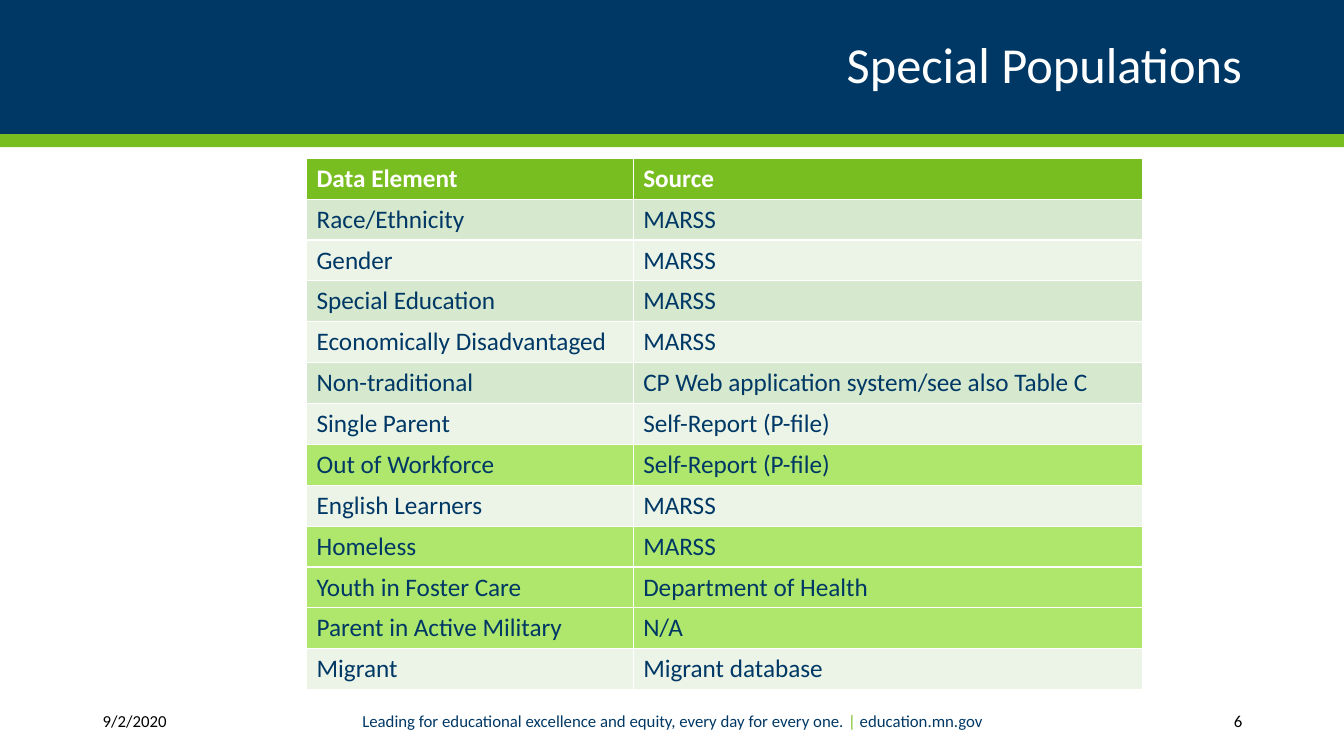
import pptx
import pptx.util
import pptx.dml.color
import pptx.enum.shapes
import pptx.enum.text

Inches = pptx.util.Inches
RGBColor = pptx.dml.color.RGBColor
MSO_SHAPE = pptx.enum.shapes.MSO_SHAPE
MSO_ANCHOR = pptx.enum.text.MSO_ANCHOR
PP_ALIGN = pptx.enum.text.PP_ALIGN

NAVY = RGBColor(0x00, 0x38, 0x65)
GREEN = RGBColor(0x78, 0xBE, 0x21)
HIGHLIGHT = RGBColor(0xAF, 0xE6, 0x6C)
BAND_DARK = RGBColor(0xD6, 0xE8, 0xCD)
BAND_LIGHT = RGBColor(0xEC, 0xF4, 0xE8)
WHITE = RGBColor(0xFF, 0xFF, 0xFF)
BLACK = RGBColor(0x00, 0x00, 0x00)


def format_run(r, size, color, bold=False):
    r.font.name = "Calibri"
    r.font.size = pptx.util.Pt(size)
    r.font.color.rgb = color
    r.font.bold = bold


prs = pptx.Presentation()
prs.slide_width = Inches(13.33)
prs.slide_height = Inches(7.5)
s = prs.slides.add_slide(prs.slide_layouts[5])

# Header bands, placed behind the title
title = s.shapes.title
for top, height, color in [(0, 1.33, NAVY), (1.33, 0.13, GREEN)]:
    sp = s.shapes.add_shape(MSO_SHAPE.RECTANGLE, 0, Inches(top),
                            prs.slide_width, Inches(height))
    sp.shadow.inherit = False
    sp.fill.solid()
    sp.fill.fore_color.rgb = color
    sp.line.fill.background()
    title.element.addprevious(sp.element)

# Title
title.left, title.top = Inches(0.92), Inches(0.17)
title.width, title.height = Inches(11.5), Inches(1)
tf = title.text_frame
tf.text = "Special Populations"
tf.vertical_anchor = MSO_ANCHOR.MIDDLE
p = tf.paragraphs[0]
p.alignment = PP_ALIGN.RIGHT
p.line_spacing = 0.9
format_run(p.runs[0], 36, WHITE)

# Table of data elements and their sources
rows = [
    ("Data Element", "Source"),
    ("Race/Ethnicity", "MARSS"),
    ("Gender", "MARSS"),
    ("Special Education", "MARSS"),
    ("Economically Disadvantaged", "MARSS"),
    ("Non-traditional", "CP Web application system/see also Table C"),
    ("Single Parent", "Self-Report (P-file)"),
    ("Out of Workforce", "Self-Report (P-file)"),
    ("English Learners", "MARSS"),
    ("Homeless", "MARSS"),
    ("Youth in Foster Care", "Department of Health"),
    ("Parent in Active Military", "N/A"),
    ("Migrant", "Migrant database"),
]
highlighted = {"Out of Workforce", "Homeless", "Youth in Foster Care",
               "Parent in Active Military"}
table = s.shapes.add_table(len(rows), 2, Inches(3.04), Inches(1.57),
                           Inches(8.29), Inches(5.27)).table
table.columns[0].width = Inches(3.24)
table.columns[1].width = Inches(5.05)
for i, row in enumerate(rows):
    if i == 0:
        fill = GREEN
    elif row[0] in highlighted:
        fill = HIGHLIGHT
    else:
        fill = BAND_DARK if i % 2 else BAND_LIGHT
    for j, text in enumerate(row):
        cell = table.cell(i, j)
        cell.text = text
        cell.fill.solid()
        cell.fill.fore_color.rgb = fill
        format_run(cell.text_frame.paragraphs[0].runs[0], 18,
                   NAVY if i else WHITE, bold=i == 0)

# Footer: date, slide number, tagline
footers = [
    (0.92, 1.49, PP_ALIGN.LEFT, [("9/2/2020", BLACK)]),
    (10.82, 1.6, PP_ALIGN.RIGHT, [("6", BLACK)]),
    (3.16, 7.02, PP_ALIGN.CENTER, [
        ("Leading for educational excellence and equity, every day for every one. ", NAVY),
        ("| ", GREEN),
        ("education.mn.gov", NAVY)]),
]
for left, width, align, parts in footers:
    sp = s.shapes.add_textbox(Inches(left), Inches(6.95), Inches(width), Inches(0.4))
    tf = sp.text_frame
    tf.word_wrap = True
    tf.vertical_anchor = MSO_ANCHOR.MIDDLE
    p = tf.paragraphs[0]
    p.alignment = align
    for text, color in parts:
        r = p.add_run()
        r.text = text
        format_run(r, 12, color)

prs.save("out.pptx")
